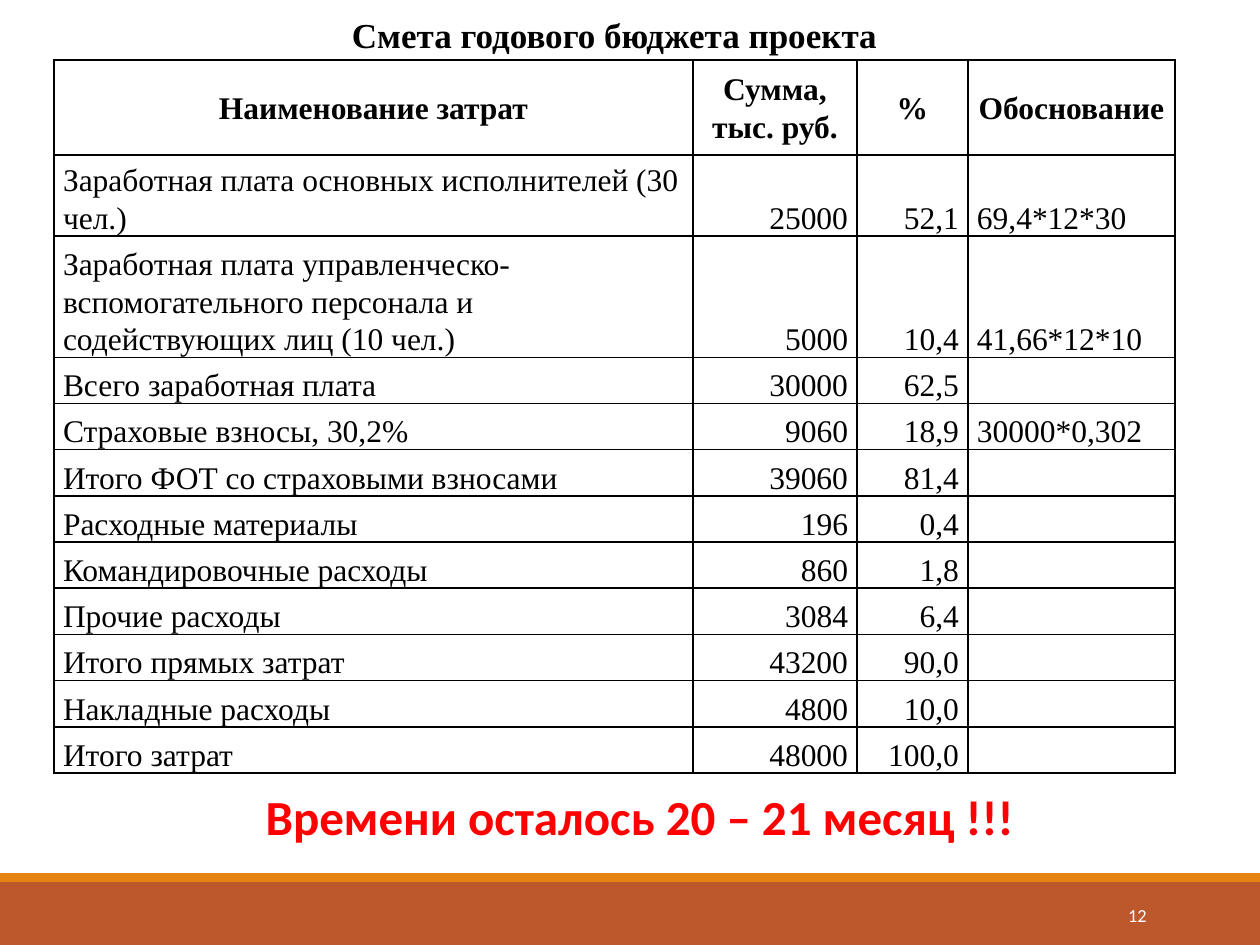
from lxml.etree import SubElement
from pptx import Presentation
from pptx.dml.color import RGBColor
from pptx.enum.shapes import MSO_SHAPE
from pptx.enum.text import MSO_ANCHOR, PP_ALIGN
from pptx.oxml.ns import qn
from pptx.util import Pt

EMU_PER_PX = 914400 / 126
COLORS = {"white": "FFFFFF", "black": "000000", "red": "FF0000",
          "rust": "BD582C", "orange": "E48312"}
SERIF, SANS = "Times New Roman", "Calibri"
COLUMN_WIDTHS = [639, 164, 111, 207]
TALL_ROWS = [95, 81, 121]
CELL_INSET = 9
COLUMN_ALIGN = [PP_ALIGN.LEFT, PP_ALIGN.RIGHT, PP_ALIGN.RIGHT, PP_ALIGN.LEFT]
BUDGET = [
    ("Наименование затрат", "Сумма, тыс. руб.", "%", "Обоснование"),
    ("Заработная плата основных исполнителей (30 чел.)", "25000", "52,1", "69,4*12*30"),
    ("Заработная плата управленческо-вспомогательного персонала и содействующих лиц (10 чел.)",
     "5000", "10,4", "41,66*12*10"),
    ("Всего заработная плата", "30000", "62,5", ""),
    ("Страховые взносы, 30,2%", "9060", "18,9", "30000*0,302"),
    ("Итого ФОТ со страховыми взносами", "39060", "81,4", ""),
    ("Расходные материалы", "196", "0,4", ""),
    ("Командировочные расходы", "860", "1,8", ""),
    ("Прочие расходы", "3084", "6,4", ""),
    ("Итого прямых затрат", "43200", "90,0", ""),
    ("Накладные расходы", "4800", "10,0", ""),
    ("Итого затрат", "48000", "100,0", ""),
]


def px(length):
    return round(length * EMU_PER_PX)


def color(name):
    return RGBColor.from_string(COLORS[name])


def style_para(para, align, font, size, tint, bold=False):
    para.alignment = align
    for style in [para.font] + [span.font for span in para.runs]:
        style.name = font
        style.size = Pt(size)
        style.bold = bold
        style.color.rgb = color(tint)


def add_label(slide, box, text, align, font, size, tint, bold=False):
    label = slide.shapes.add_textbox(*map(px, box))
    frame = label.text_frame
    frame.word_wrap = True
    frame.vertical_anchor = MSO_ANCHOR.MIDDLE
    frame.text = text
    style_para(frame.paragraphs[0], align, font, size, tint, bold)


def add_band(slide, box, tint):
    band = slide.shapes.add_shape(MSO_SHAPE.RECTANGLE, *map(px, box))
    band.shadow.inherit = False
    band.fill.solid()
    band.fill.fore_color.rgb = color(tint)
    band.line.fill.background()


def add_footer(slide, box):
    left, top, width, height = box
    stripe = 9
    add_band(slide, (left, top + stripe, width, height - stripe), "rust")
    add_band(slide, (left, top, width, stripe), "orange")
    add_label(slide, (left + 1023, top + 17, 136, 50), "12",
              PP_ALIGN.RIGHT, SANS, 10.5, "white")


def add_borders(cell):
    properties = cell._tc.get_or_add_tcPr()
    for index, side in enumerate(("lnL", "lnR", "lnT", "lnB")):
        border = properties.makeelement(qn(f"a:{side}"), {"w": str(Pt(1))})
        fill = SubElement(border, qn("a:solidFill"))
        SubElement(fill, qn("a:srgbClr"), val=COLORS["black"])
        properties.insert(index, border)


def fill_cell(cell, text, align, header):
    cell.margin_left = cell.margin_right = px(CELL_INSET)
    cell.margin_top = cell.margin_bottom = 0
    cell.vertical_anchor = MSO_ANCHOR.MIDDLE if header else MSO_ANCHOR.BOTTOM
    cell.fill.solid()
    cell.fill.fore_color.rgb = color("white")
    cell.text_frame.text = text
    para = cell.text_frame.paragraphs[0]
    para.line_spacing = 1.07
    style_para(para, PP_ALIGN.CENTER if header else align, SERIF, 18, "black", header)
    add_borders(cell)


def add_budget_table(slide, box):
    height = box[3]
    frame = slide.shapes.add_table(len(BUDGET), len(COLUMN_WIDTHS), *map(px, box))
    table = frame.table
    table.horz_banding = False
    for column, width in zip(table.columns, COLUMN_WIDTHS):
        column.width = px(width)
    short_count = len(BUDGET) - len(TALL_ROWS)
    short_row = (height - sum(TALL_ROWS)) / short_count
    for row, row_height in zip(table.rows, TALL_ROWS + [short_row] * short_count):
        row.height = px(row_height)
    for row_index, (row, values) in enumerate(zip(table.rows, BUDGET)):
        for cell, text, align in zip(row.cells, values, COLUMN_ALIGN):
            fill_cell(cell, text, align, row_index == 0)


def main():
    deck = Presentation()
    deck.slide_width, deck.slide_height = px(1260), px(945)
    slide = deck.slides.add_slide(deck.slide_layouts[6])
    add_footer(slide, (0, 873, 1260, 72))
    add_label(slide, (302, 7, 625, 55), "Смета годового бюджета проекта",
              PP_ALIGN.CENTER, SERIF, 20, "black", True)
    add_budget_table(slide, (54, 60, sum(COLUMN_WIDTHS), 713))
    add_label(slide, (44, 780, 1191, 72), "Времени осталось 20 – 21 месяц !!!",
              PP_ALIGN.CENTER, SANS, 28, "red", True)
    deck.save("out.pptx")


if __name__ == "__main__":
    main()
